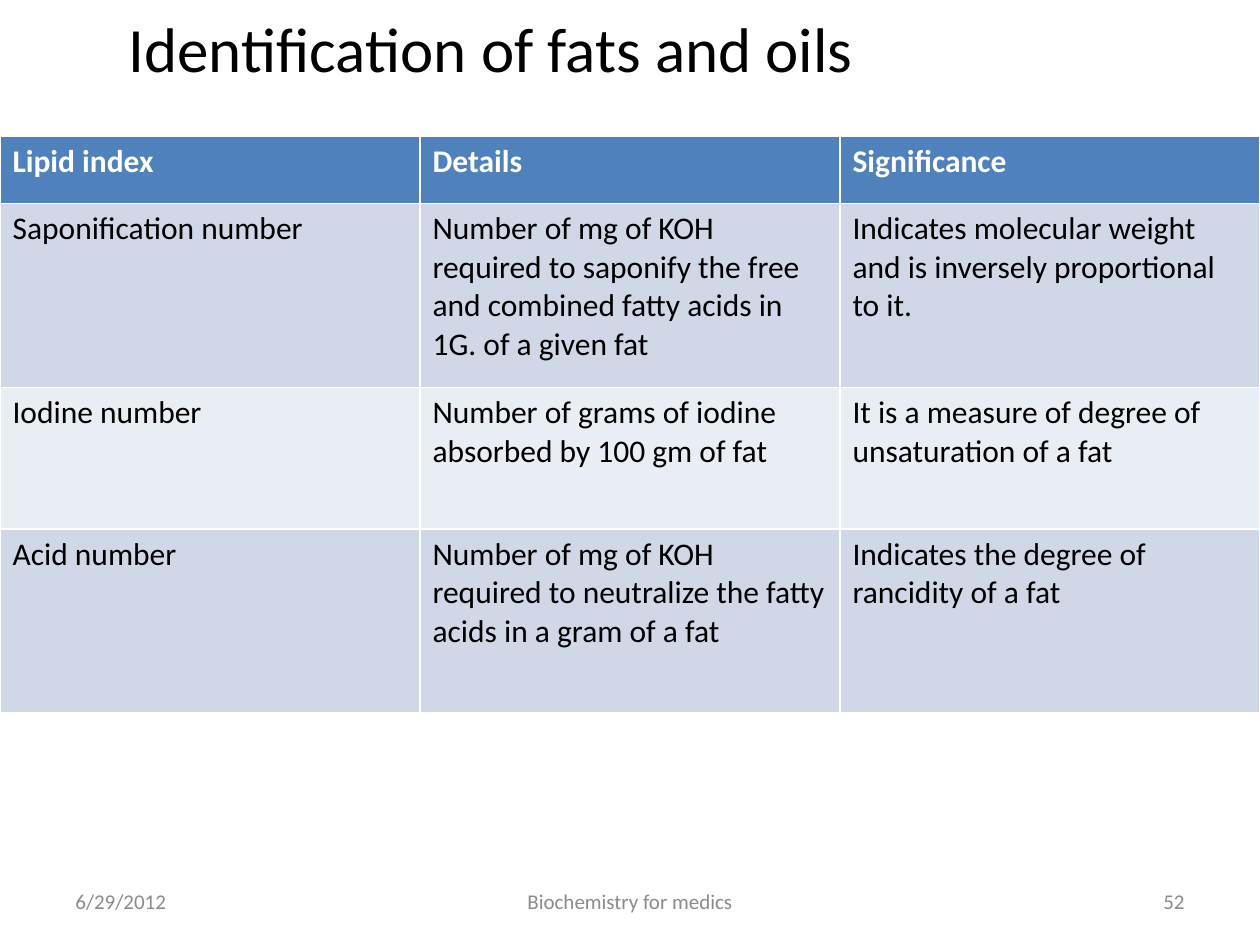
from pptx import Presentation
from pptx.dml.color import RGBColor
from pptx.enum import text as t
from pptx.util import Pt

# Content
TITLE = "Identification of fats and oils"
ROWS = [
    ("Lipid index", "Details", "Significance"),
    ("Saponification number",
     "Number of mg of KOH required to saponify the free and combined fatty acids in 1G. of a given fat",
     "Indicates molecular weight and is inversely proportional to it."),
    ("Iodine number",
     "Number of grams of iodine absorbed by 100 gm of fat",
     "It is a measure of degree of unsaturation of a fat"),
    ("Acid number",
     "Number of mg of KOH required to neutralize the fatty acids in a gram of a fat",
     "Indicates the degree of rancidity of a fat"),
]
HEIGHTS = [38.4, 105, 81, 105]
FOOTER = [  # text, left, width, alignment
    ("6/29/2012", 36, 168, t.PP_ALIGN.LEFT),
    ("Biochemistry for medics", 246, 228, t.PP_ALIGN.CENTER),
    ("52", 516, 168, t.PP_ALIGN.RIGHT),
]
COLORS = {"ink": "000000", "white": "FFFFFF", "head": "4F81BD",
          "odd": "D0D8E8", "even": "E9EDF4", "foot": "8C8C8C"}
WIDE, HIGH = 720, 540


def color(name):
    return RGBColor.from_string(COLORS[name])


def write(frame, words, size, ink, align=t.PP_ALIGN.LEFT, bold=False):
    frame.text = words
    para = frame.paragraphs[0]
    para.alignment = align
    look = {"name": "Calibri", "size": Pt(size), "bold": bold}
    for key, val in look.items():
        setattr(para.font, key, val)
    para.font.color.rgb = color(ink)


def place(shape, *box):
    for key, val in zip(("left", "top", "width", "height"), box):
        setattr(shape, key, Pt(val))


deck = Presentation()
deck.slide_width, deck.slide_height = Pt(WIDE), Pt(HIGH)
slide = deck.slides.add_slide(deck.slide_layouts[5])

# Title
title = slide.shapes.title
place(title, 60, 0, 612, 54)
write(title.text_frame, TITLE, 36, "ink")
title.text_frame.margin_left = Pt(13.5)
title.text_frame.vertical_anchor = t.MSO_ANCHOR.MIDDLE

# Table of lipid indices
table = slide.shapes.add_table(len(ROWS), len(ROWS[0]), Pt(0), Pt(78),
                               Pt(WIDE), Pt(sum(HEIGHTS))).table
for r, (row, high) in enumerate(zip(ROWS, HEIGHTS)):
    table.rows[r].height = Pt(high)
    head = r == 0
    fill = "head" if head else "odd" if r % 2 else "even"
    for c, words in enumerate(row):
        cell = table.cell(r, c)
        cell.fill.solid()
        cell.fill.fore_color.rgb = color(fill)
        write(cell.text_frame, words, 18, "white" if head else "ink", bold=head)

# Footer
for words, left, wide, align in FOOTER:
    box = slide.shapes.add_textbox(Pt(left), Pt(500.5), Pt(wide), Pt(28.75))
    box.text_frame.word_wrap = True
    box.text_frame.vertical_anchor = t.MSO_ANCHOR.MIDDLE
    write(box.text_frame, words, 12, "foot", align)

deck.save("out.pptx")
